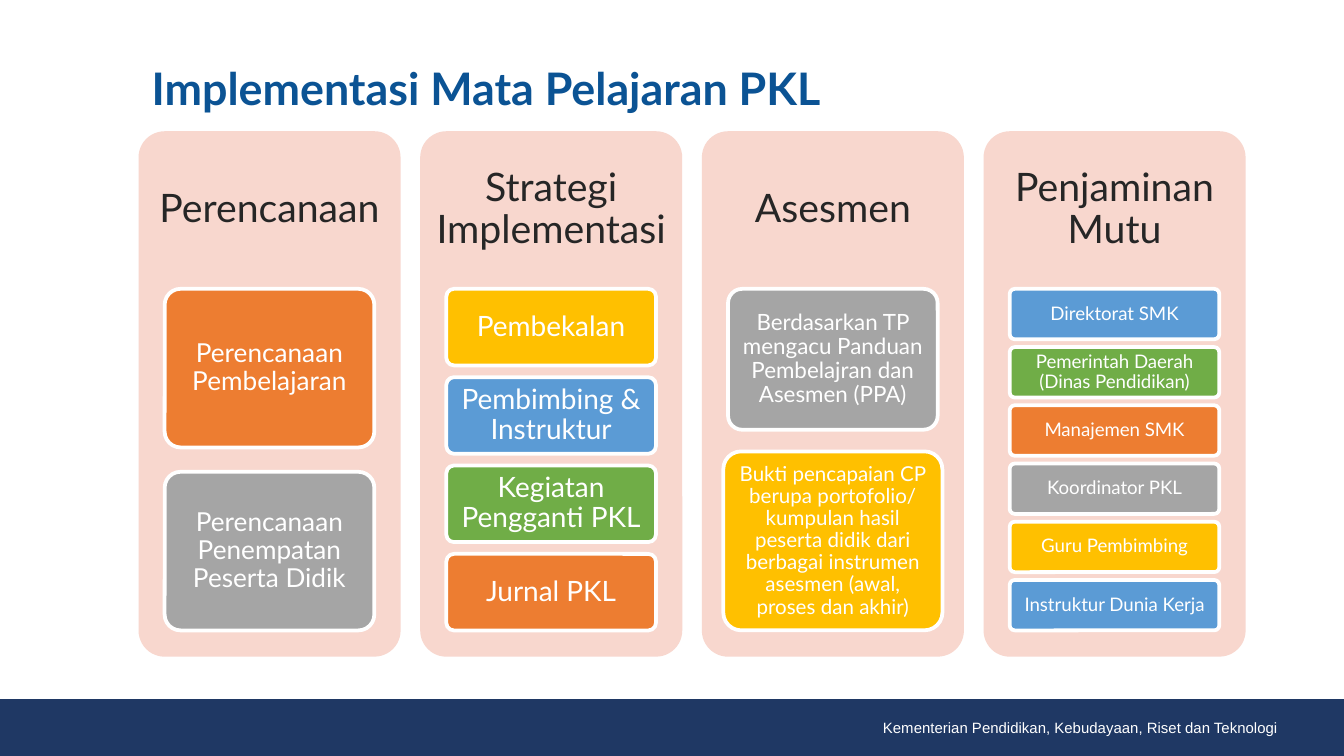
import pptx
import pptx.dml.color
import pptx.enum.shapes
import pptx.enum.text
import pptx.util

Pt = pptx.util.Pt
SHAPE = pptx.enum.shapes.MSO_SHAPE
ALIGN = pptx.enum.text.PP_ALIGN
ANCHOR = pptx.enum.text.MSO_ANCHOR

COLORS = {
    "navy": "1F3864", "title": "0B5394", "panel": "F8D7CE", "heading": "262626",
    "white": "FFFFFF", "orange": "ED7D31", "gray": "A5A5A5", "yellow": "FFC000",
    "blue": "5B9BD5", "green": "70AD47",
}
GAP_RATIO = 0.154  # gap between cards, relative to a card of weight 1

# Each card: text, fill and, where it differs, relative height and width
COLUMNS = [
    {"heading": "Perencanaan", "sizes": [14, 14], "inset": 5, "cards": [
        ("Perencanaan Pembelajaran", "orange"),
        ("Perencanaan Penempatan Peserta Didik", "gray")]},
    {"heading": "Strategi Implementasi", "sizes": [15] * 4, "inset": 4, "cards": [
        ("Pembekalan", "yellow"),
        ("Pembimbing & Instruktur", "blue"),
        ("Kegiatan Pengganti PKL", "green"),
        ("Jurnal PKL", "orange")]},
    {"heading": "Asesmen", "sizes": [12, 11], "inset": 4.5, "cards": [
        ("Berdasarkan TP mengacu Panduan Pembelajran dan Asesmen (PPA)", "gray"),
        ("Bukti pencapaian CP berupa portofolio/ kumpulan hasil peserta didik dari "
         "berbagai instrumen asesmen (awal, proses dan akhir)", "yellow", 1.27, 117.4)]},
    {"heading": "Penjaminan Mutu", "sizes": [10] * 6, "inset": 3, "cards": [
        ("Direktorat SMK", "blue"),
        ("Pemerintah Daerah (Dinas Pendidikan)", "green"),
        ("Manajemen SMK", "orange"),
        ("Koordinator PKL", "gray"),
        ("Guru Pembimbing", "yellow"),
        ("Instruktur Dunia Kerja", "blue")]},
]


def rgb(name):
    return pptx.dml.color.RGBColor.from_string(COLORS[name])


def set_text(sp, text, color, size, inset, align=ALIGN.CENTER,
             anchor=ANCHOR.MIDDLE, font="Lato", bold=False, spacing=0.9):
    tf = sp.text_frame
    margin_x, margin_y = inset
    frame = {"word_wrap": True, "vertical_anchor": anchor,
             "margin_left": Pt(margin_x), "margin_right": Pt(margin_x),
             "margin_top": Pt(margin_y), "margin_bottom": Pt(margin_y)}
    for name, value in frame.items():
        setattr(tf, name, value)
    p = tf.paragraphs[0]
    p.alignment = align
    p.line_spacing = spacing
    r = p.add_run()
    r.text = text
    for name, value in {"name": font, "size": Pt(size), "bold": bold}.items():
        setattr(r.font, name, value)
    r.font.color.rgb = rgb(color)


def add_text(s, box, *args, **formats):
    sp = s.shapes.add_textbox(*map(Pt, box))
    set_text(sp, *args, **formats)


def add_block(s, kind, box, fill, line=None, width=1):
    sp = s.shapes.add_shape(kind, *map(Pt, box))
    sp.shadow.inherit = False
    sp.fill.solid()
    sp.fill.fore_color.rgb = rgb(fill)
    if line:
        sp.line.color.rgb = rgb(line)
        sp.line.width = Pt(width)
    else:
        sp.line.fill.background()
    if kind == SHAPE.ROUNDED_RECTANGLE:
        sp.adjustments[0] = 0.1
    return sp


def add_footer(s, x, y, w, h):
    add_block(s, SHAPE.RECTANGLE, (x, y, w, h), "navy", "navy")
    add_text(s, (x + w - 311.8, y + 7.2, 281.5, 14.4),
             "Kementerian Pendidikan, Kebudayaan, Riset dan Teknologi",
             "white", 8, (5, 3), align=ALIGN.RIGHT, anchor=ANCHOR.TOP,
             font="Arial", spacing=1)


def add_title(s, x, y, w, h):
    add_text(s, (x, y, w, h), "Implementasi Mata Pelajaran PKL", "title", 24,
             (7.2, 7.2), align=ALIGN.LEFT, anchor=ANCHOR.TOP, bold=True, spacing=1)


def add_column(s, x, y, w, h, column):
    # Panel and heading
    add_block(s, SHAPE.ROUNDED_RECTANGLE, (x, y, w, h), "panel")
    add_text(s, (x, y, w, 0.3 * h), column["heading"], "heading", 21, (6.5, 6.5))

    # Cards share the lower part of the panel
    cards = [(*card, 1, 0.8 * w)[:4] if len(card) == 2 else card
             for card in column["cards"]]
    total = sum(weight for _, _, weight, _ in cards) + GAP_RATIO * (len(cards) - 1)
    unit = 0.65 * h / total
    top = y + 0.3 * h
    for (text, fill, weight, width), size in zip(cards, column["sizes"]):
        box = (x + (w - width) / 2, top, width, weight * unit)
        sp = add_block(s, SHAPE.ROUNDED_RECTANGLE, box, fill, "white", 2)
        set_text(sp, text, "white", size, (column["inset"], 2))
        top += (weight + GAP_RATIO) * unit


def main():
    prs = pptx.Presentation()
    prs.slide_width, prs.slide_height = Pt(720), Pt(405)
    s = prs.slides.add_slide(prs.slide_layouts[6])

    add_footer(s, 0, 375, 720, 30)
    add_title(s, 74.2, 25.2, 607.7, 45.4)
    for i, column in enumerate(COLUMNS):
        add_column(s, 74.2 + i * 150.9, 70.3, 140.4, 281.5, column)

    prs.save("out.pptx")


if __name__ == "__main__":
    main()
